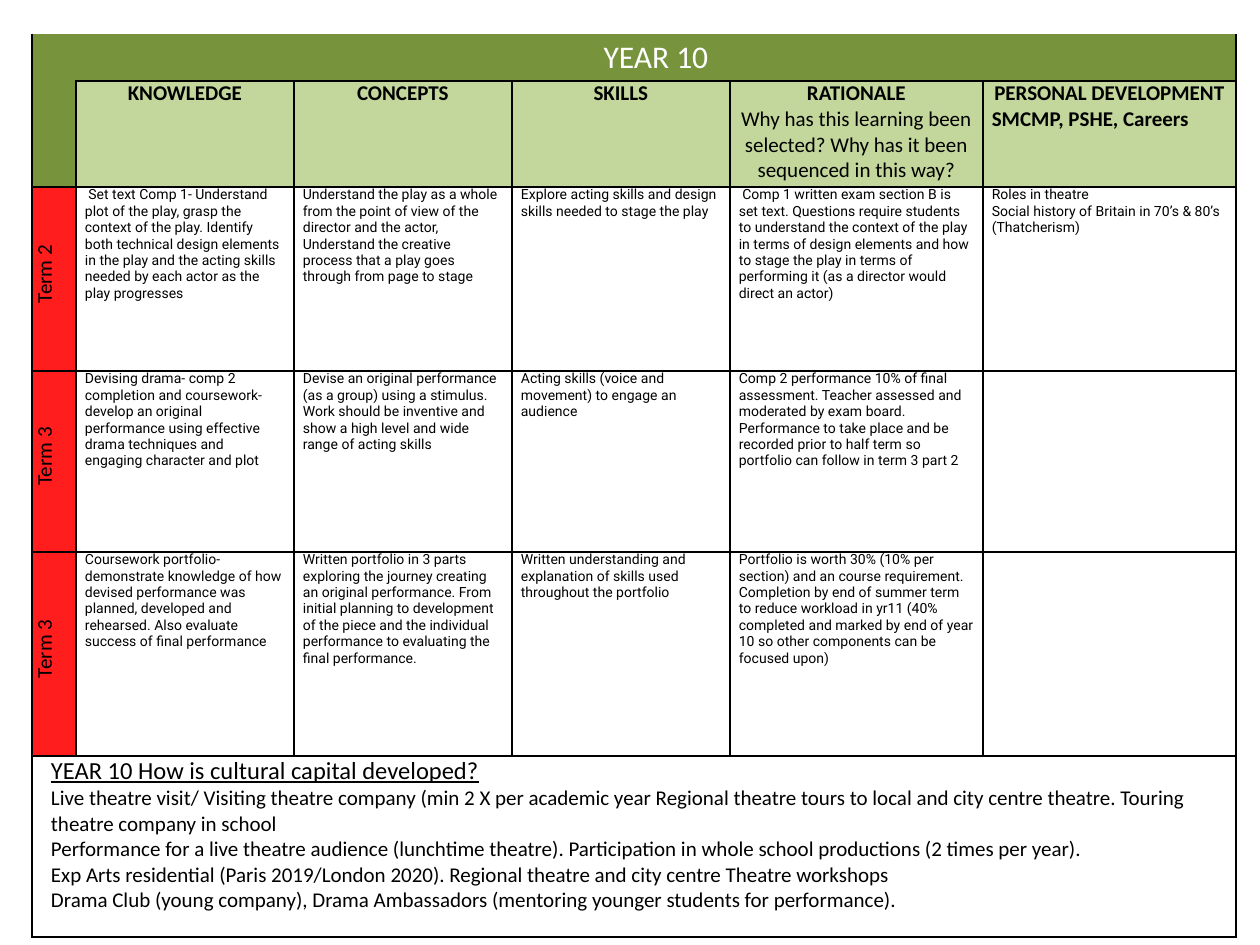
from pptx import Presentation
from pptx.dml.color import RGBColor
from pptx.enum.text import MSO_ANCHOR, PP_ALIGN
from pptx.oxml.ns import qn
from pptx.util import Pt
from lxml import etree

CENTER, LEFT, MIDDLE = PP_ALIGN.CENTER, PP_ALIGN.LEFT, MSO_ANCHOR.MIDDLE
PX = 914400 / 126
COLORS = {"title": "77933C", "heading": "C3D69B", "term": "FF1D1D",
          "white": "FFFFFF", "black": "000000"}
COLUMNS = [44, 218, 218, 218, 253, 253]
ROWS = [47, 106, 184, 181, 204, 181]
INDENT = 10


def emu(px):
    return round(px * PX)


class Plan:
    """Holds the slide and the look of its table."""

    def __init__(self, slide):
        self.slide = slide

    def table(self, left, top, columns, rows):
        frame = self.slide.shapes.add_table(
            len(rows), len(columns), emu(left), emu(top),
            emu(sum(columns)), emu(sum(rows)))
        self.grid = frame.table
        self.grid.first_row = self.grid.horz_banding = False
        for column, width in zip(self.grid.columns, columns):
            column.width = emu(width)
        for row, height in zip(self.grid.rows, rows):
            row.height = emu(height)

    def merge(self, first, last):
        self.grid.cell(*first).merge(self.grid.cell(*last))

    def cell(self, row, column, fill=None, sides="LRTB"):
        """Sets the margins, borders and fill of one cell."""
        cell = self.grid.cell(row, column)
        cell.margin_left = cell.margin_right = emu(9)
        cell.margin_top = cell.margin_bottom = 0
        properties = cell._tc.get_or_add_tcPr()
        for side in "LRTB":
            line = etree.SubElement(properties, qn("a:ln" + side), w=str(Pt(1)))
            if side in sides:
                solid = etree.SubElement(line, qn("a:solidFill"))
                etree.SubElement(solid, qn("a:srgbClr"), val=COLORS["black"])
            else:
                etree.SubElement(line, qn("a:noFill"))
        if fill:
            cell.fill.solid()
            cell.fill.fore_color.rgb = RGBColor.from_string(COLORS[fill])
        else:
            cell.fill.background()
        return cell

    def text(self, cell, lines, size=12, font="Calibri", color="black",
             align=LEFT, indent=0):
        """Fills a cell with one paragraph a line and returns the paragraphs."""
        cell.text_frame.text = "\n".join(lines)
        paragraphs = cell.text_frame.paragraphs
        for paragraph in paragraphs:
            paragraph.alignment = align
            paragraph.font.size = Pt(size)
            paragraph.font.name = font
            paragraph.font.bold = False
            paragraph.font.color.rgb = RGBColor.from_string(COLORS[color])
            if indent:
                paragraph._p.get_or_add_pPr().set("marL", str(emu(indent)))
        return paragraphs

    def term(self, row, name):
        cell = self.cell(row, 0, "term")
        cell.vertical_anchor = MIDDLE
        cell._tc.get_or_add_tcPr().set("vert", "vert270")
        self.text(cell, [name], align=CENTER, indent=INDENT)


HEADINGS = [
    ["KNOWLEDGE"],
    ["CONCEPTS"],
    ["SKILLS"],
    ["RATIONALE", "Why has this learning been selected? "
     "Why has it been sequenced in this way?"],
    ["PERSONAL DEVELOPMENT", "SMCMP, PSHE, Careers"],
]
TERMS = [
    ("Term 2", [
        [" Set text Comp 1- Understand plot of the play, grasp the context of the "
         "play. Identify both technical design elements in the play and the acting "
         "skills needed by each actor as the play progresses"],
        ["Understand the play as a whole from the point of view of the director and "
         "the actor, Understand the creative process that a play goes through from "
         "page to stage"],
        ["Explore acting skills and design skills needed to stage the play"],
        [" Comp 1 written exam section B is set text. Questions require students to "
         "understand the context of the play in terms of design elements and how to "
         "stage the play in terms of performing it (as a director would direct an "
         "actor)"],
        ["Roles in theatre",
         "Social history of Britain in 70’s & 80’s (Thatcherism)"],
    ]),
    ("Term 3", [
        ["Devising drama- comp 2 completion and coursework- develop an original "
         "performance using effective drama techniques and engaging character and "
         "plot"],
        ["Devise an original performance (as a group) using a stimulus. Work should "
         "be inventive and show a high level and wide range of acting skills"],
        ["Acting skills (voice and movement) to engage an audience"],
        ["Comp 2 performance 10% of final assessment. Teacher assessed and moderated "
         "by exam board. Performance to take place and be recorded prior to half "
         "term so portfolio can follow in term 3 part 2"],
        [],
    ]),
    ("Term 3", [
        ["Coursework portfolio- demonstrate knowledge of how devised performance was "
         "planned, developed and rehearsed. Also evaluate success of final "
         "performance"],
        ["Written portfolio in 3 parts exploring the journey creating an original "
         "performance. From initial planning to development of the piece and the "
         "individual performance to evaluating the final performance."],
        ["Written understanding and explanation of skills used throughout the "
         "portfolio"],
        ["Portfolio is worth 30% (10% per section) and an course requirement. "
         "Completion by end of summer term to reduce workload in yr11 (40% completed "
         "and marked by end of year 10 so other components can be focused upon)"],
        [],
    ]),
]
CULTURAL_CAPITAL = [
    "YEAR 10 How is cultural capital developed?",
    "Live theatre visit/ Visiting theatre company (min 2 X per academic year "
    "Regional theatre tours to local and city centre theatre. Touring theatre "
    "company in school",
    "Performance for a live theatre audience (lunchtime theatre). Participation in "
    "whole school productions (2 times per year).",
    "Exp Arts residential (Paris 2019/London 2020). Regional theatre and city centre "
    "Theatre workshops",
    "Drama Club (young company), Drama Ambassadors (mentoring younger students for "
    "performance).",
]


def main():
    deck = Presentation()
    deck.slide_width, deck.slide_height = emu(1260), emu(945)
    plan = Plan(deck.slides.add_slide(deck.slide_layouts[6]))
    plan.table(32, 34, COLUMNS, ROWS)
    last_column, last_row = len(COLUMNS) - 1, len(ROWS) - 1

    # Title band and corner
    plan.merge((0, 0), (1, 0))
    plan.merge((0, 1), (0, last_column))
    for row in (0, 1):
        plan.cell(row, 0, "title", "LB")
    for column in range(1, last_column + 1):
        plan.cell(0, column, "title", "RB")
    title = plan.grid.cell(0, 1)
    title.vertical_anchor = MIDDLE
    plan.text(title, ["YEAR 10"], size=18, color="white", align=CENTER)

    # Column headings
    for column, lines in enumerate(HEADINGS, 1):
        heading = plan.text(plan.cell(1, column, "heading"), lines, align=CENTER)
        heading[0].font.bold = True
    heading[1].font.bold = True
    heading[1].alignment = LEFT

    # Terms
    for row, (name, topics) in enumerate(TERMS, 2):
        plan.term(row, name)
        for column, lines in enumerate(topics, 1):
            plan.text(plan.cell(row, column, "white"), lines, size=8, font="Roboto")

    # Cultural capital
    plan.merge((last_row, 0), (last_row, last_column))
    for column in range(last_column + 1):
        plan.cell(last_row, column)
    question = plan.text(plan.grid.cell(last_row, 0), CULTURAL_CAPITAL,
                         indent=INDENT)[0]
    question.font.size = Pt(14)
    question.font.underline = True

    deck.save("out.pptx")


if __name__ == "__main__":
    main()
